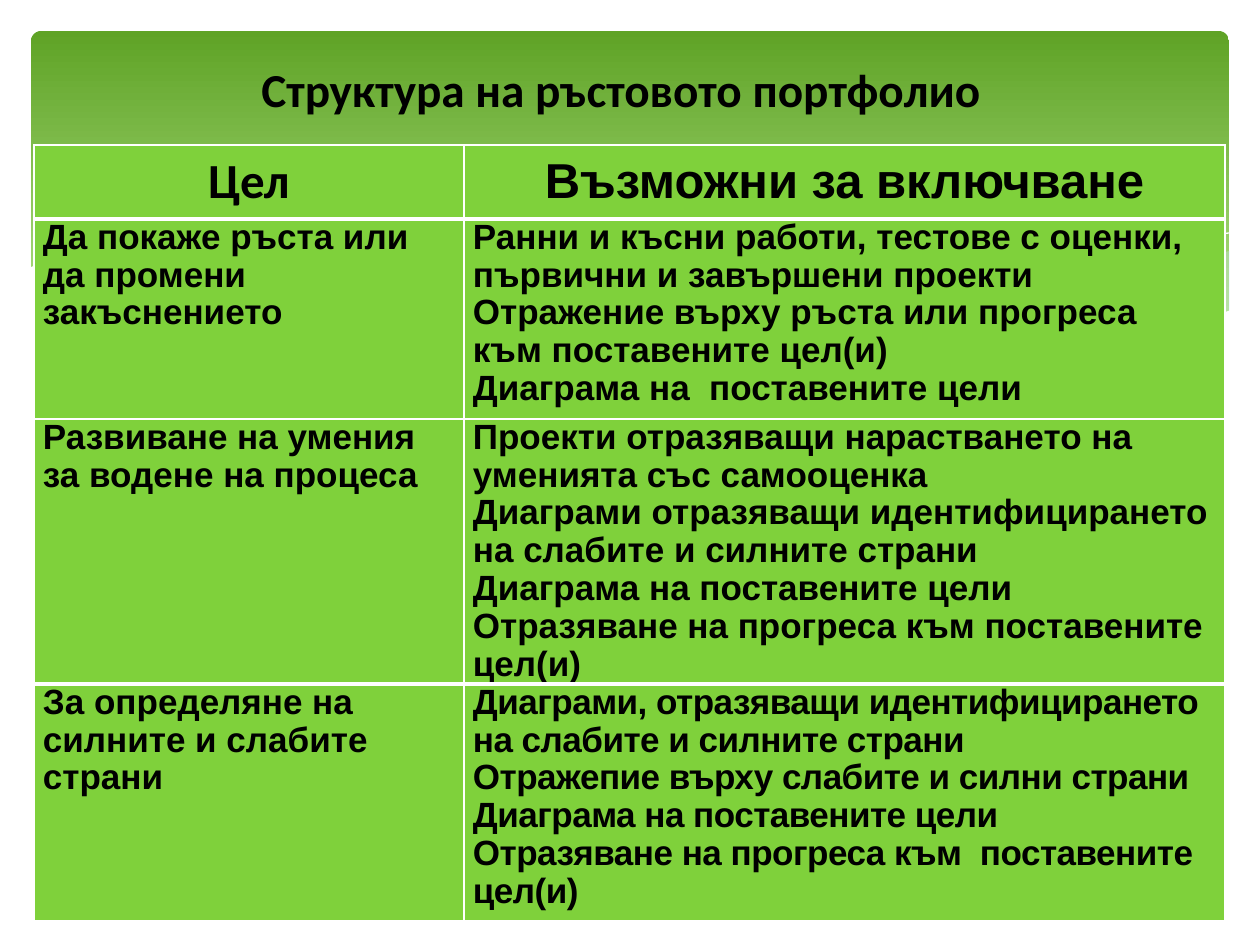
from lxml import etree
from pptx import Presentation, util as u
from pptx.dml.color import RGBColor
from pptx.enum import shapes, text
from pptx.oxml.ns import qn

SCALE = 914400 / 126
HEX = {"dark": "5FA326", "light": "B2E389", "pale": "D6ECFF",
       "white": "FFFFFF", "cell": "7FD13B", "ink": "000000"}
MID, TOP = text.MSO_ANCHOR.MIDDLE, text.MSO_ANCHOR.TOP
MAIN, LEFT = text.PP_ALIGN.CENTER, text.PP_ALIGN.LEFT


def px(n):
    return u.Emu(round(n * SCALE))


def rgb(name):
    return RGBColor.from_string(HEX[name])


def put(obj, vals):
    for key, val in vals.items():
        setattr(obj, key, val)


class Deck:
    def __init__(self, wide, high):
        self.prs = Presentation()
        put(self.prs, {"slide_width": px(wide), "slide_height": px(high)})
        self.slide = self.prs.slides.add_slide(self.prs.slide_layouts[5])
        self.items = self.slide.shapes

    def label(self, para, words, font, size, align, space=1.0, track=0):
        put(para, {"alignment": align, "line_spacing": space,
                   "space_before": u.Pt(0), "space_after": u.Pt(0)})
        run = para.add_run()
        run.text = words
        put(run.font, {"name": font, "size": u.Pt(size), "bold": True})
        run.font.color.rgb = rgb("ink")
        if track:
            run.font._element.set("spc", str(track))

    def title(self, box, words, foot):
        item = self.items.title
        put(item, dict(zip(("left", "top", "width", "height"), map(px, box))))
        frame = item.text_frame
        put(frame, {"vertical_anchor": MID, "word_wrap": True,
                    "auto_size": text.MSO_AUTO_SIZE.NONE,
                    "margin_bottom": px(foot)})
        self.label(frame.paragraphs[0], words, "Calibri", 27, MAIN)
        # Bring the title in front of the banner
        item.element.getparent().append(item.element)

    def banner(self, box, bend):
        item = self.items.add_shape(shapes.MSO_SHAPE.ROUNDED_RECTANGLE,
                                    *map(px, box))
        item.adjustments[0] = bend
        item.shadow.inherit = False
        item.line.fill.background()
        item.fill.gradient()
        item.fill.gradient_angle = 270
        for stop, name, pos in zip(item.fill.gradient_stops,
                                   ("dark", "light"), (0, 0.9)):
            stop.color.rgb = rgb(name)
            stop.position = pos

    def wave(self, pts, fill=None, alpha=100):
        form = self.items.build_freeform(*pts[0], scale=SCALE)
        form.add_line_segments(pts[1:], close=fill is not None)
        item = form.convert_to_shape()
        item.shadow.inherit = False
        if fill is None:
            item.fill.background()
            item.line.color.rgb = rgb("white")
            item.line.width = u.Pt(0)
            return
        item.line.fill.background()
        item.fill.solid()
        item.fill.fore_color.rgb = rgb(fill)
        if alpha < 100:
            tint = item.element.spPr.find(qn("a:solidFill"))[0]
            etree.SubElement(tint, qn("a:alpha"), val=str(alpha * 1000))

    def edges(self, cell, top, foot):
        props = cell._tc.get_or_add_tcPr()
        sides = {"L": 1, "R": 1, "T": top, "B": foot}
        for spot, (side, wide) in enumerate(sides.items()):
            line = etree.Element(qn("a:ln" + side), w=str(u.Pt(wide)))
            fill = etree.SubElement(line, qn("a:solidFill"))
            etree.SubElement(fill, qn("a:srgbClr"), val=HEX["white"])
            props.insert(spot, line)

    def cell(self, cell, lines, look, anchor, top, foot):
        put(cell, {"margin_left": px(9), "margin_right": px(9),
                   "margin_top": 0, "margin_bottom": 0,
                   "vertical_anchor": anchor})
        cell.fill.solid()
        cell.fill.fore_color.rgb = rgb("cell")
        self.edges(cell, top, foot)
        frame = cell.text_frame
        for n, words in enumerate(lines):
            para = frame.add_paragraph() if n else frame.paragraphs[0]
            self.label(para, words, **look)

    def table(self, left, top, cols, rows, data, thick):
        grid = self.items.add_table(len(rows), len(cols), px(left), px(top),
                                    px(sum(cols)), px(sum(rows))).table
        for col, wide in zip(grid.columns, cols):
            col.width = px(wide)
        for row, high in zip(grid.rows, rows):
            row.height = px(high)
        for r, line in enumerate(data):
            for c, lines in enumerate(line):
                if r == 0:
                    look = {"font": ("Calibri", "Arial")[c], "size": 28,
                            "align": MAIN}
                else:
                    look = {"font": "Arial", "size": 20, "align": LEFT,
                            "space": 0.97,
                            "track": -30 if (r, c) == (3, 1) else 0}
                self.cell(grid.cell(r, c), lines, look, TOP if r else MID,
                          3 if r in thick else 1, 3 if r + 1 in thick else 1)


# Wave outlines in px
RIGHT = [(1230, 251), (1178, 261), (1085, 281), (982, 305), (890, 324),
         (833, 334), (905, 343), (1012, 350), (1099, 345), (1169, 331),
         (1230, 311)]
BROAD = [(1125, 344), (1017, 328), (890, 302), (793, 280), (682, 256),
         (586, 241), (479, 234), (360, 241), (456, 256), (566, 280),
         (713, 312), (838, 335), (959, 349), (1043, 350)]
CREST = [(389, 246), (457, 238), (546, 236), (643, 242), (766, 257),
         (876, 276), (1002, 304), (1143, 343)]
RISE = [(772, 324), (907, 289), (1016, 265), (1110, 247), (1229, 233)]
FRONT = [(1231, 310), (1172, 330), (1102, 344), (1019, 349), (915, 343),
         (789, 325), (667, 301), (563, 277), (460, 255), (368, 241),
         (290, 233), (223, 232), (150, 236), (84, 248), (45, 261),
         (29, 268), (29, 415), (1231, 415)]

DATA = [
    (["Цел"], ["Възможни за включване"]),
    (["Да покаже ръста или да промени закъснението"],
     ["Ранни и късни работи, тестове с оценки, първични и завършени проекти",
      "Отражение върху ръста или прогреса към поставените цел(и)",
      "Диаграма на  поставените цели"]),
    (["Развиване на умения за водене на процеса"],
     ["Проекти отразяващи нарастването на уменията със самооценка",
      "Диаграми отразяващи идентифицирането на слабите и силните страни",
      "Диаграма на поставените цели",
      "Отразяване на прогреса към поставените цел(и)"]),
    (["За определяне на силните и слабите страни"],
     ["Диаграми, отразяващи идентифицирането на слабите и силните страни",
      "Отражепие върху слабите и силни страни Диаграма на поставените цели",
      "Отразяване на прогреса към  поставените цел(и)"]),
]


def main():
    deck = Deck(1260, 945)
    # Green banner with waves
    deck.banner((31, 31, 1198, 340), 0.03)
    deck.wave(RIGHT, "pale", 29)
    deck.wave(BROAD, "pale", 40)
    deck.wave(CREST)
    deck.wave(RISE)
    deck.wave(FRONT, "white")
    # Title
    deck.title((54, 45, 1134, 173), "Структура на ръстовото портфолио", 93)
    # Goals table
    deck.table(34, 145, (430, 761), (74, 200, 233, 237), DATA, thick=(1, 3))
    deck.prs.save("out.pptx")


if __name__ == "__main__":
    main()
